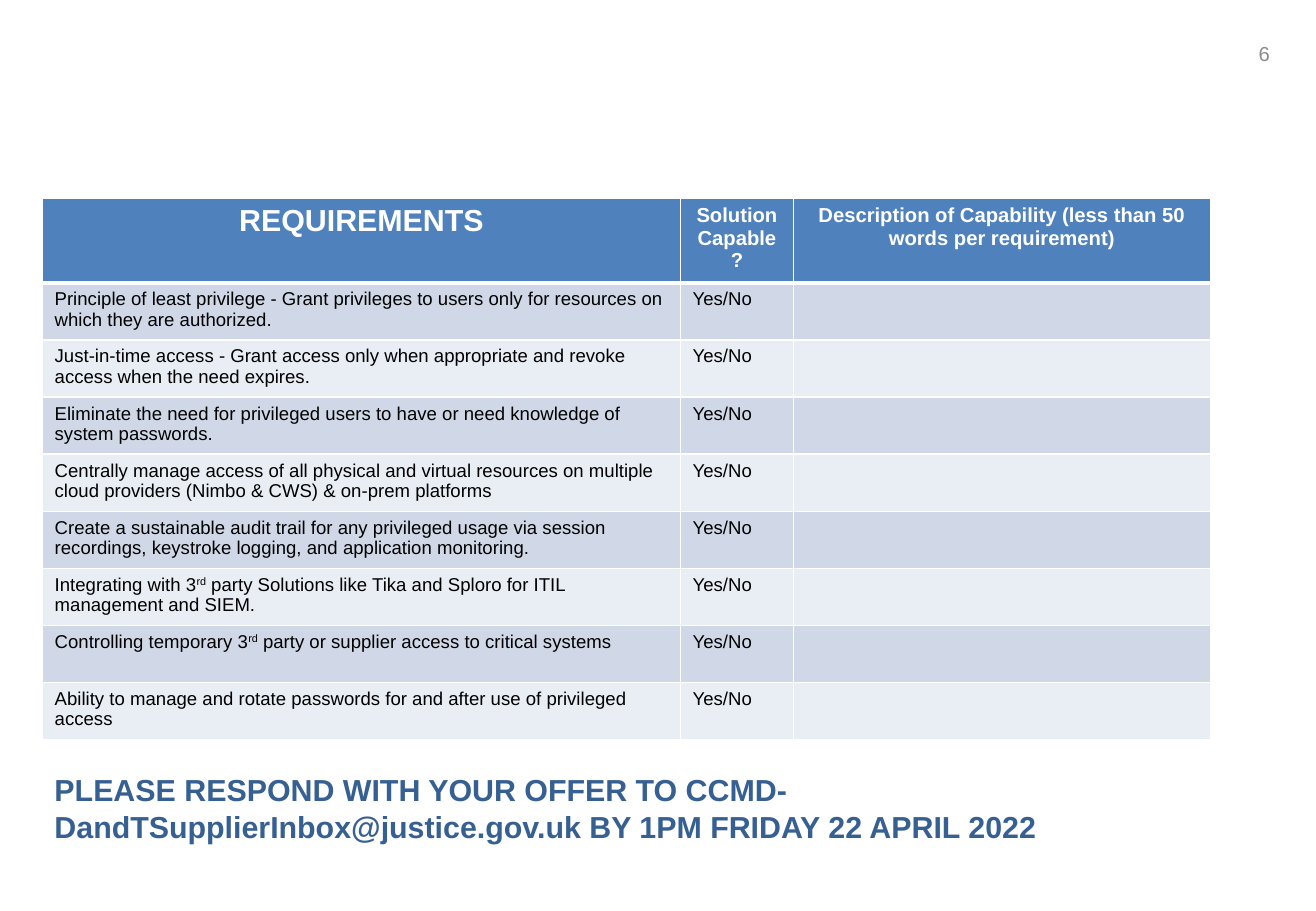
from lxml import etree
from pptx import Presentation
from pptx.dml.color import RGBColor
from pptx.enum.text import MSO_ANCHOR, PP_ALIGN
from pptx.oxml.ns import qn
from pptx.util import Inches, Pt

LEFT, CENTER, RIGHT = PP_ALIGN.LEFT, PP_ALIGN.CENTER, PP_ALIGN.RIGHT
MIDDLE, TOP = MSO_ANCHOR.MIDDLE, MSO_ANCHOR.TOP
BLANK_LAYOUT = 6
FONT = "Arial"
COLORS = {
    "header": "4F81BD",
    "odd_row": "D0D8E8",
    "even_row": "E9EDF4",
    "white": "FFFFFF",
    "text": "000000",
    "notice": "376092",
    "page_number": "8C8C8C",
}

COLUMN_WIDTHS = [5.25, 0.93, 3.43]
HEADER_HEIGHT, ROW_HEIGHT = 0.69, 0.47
HEADERS = [
    ("REQUIREMENTS", 18),
    ("Solution Capable?", 12),
    ("Description of Capability (less than 50 words per requirement)", 12),
]
ANSWER = "Yes/No"
# A requirement is a list of spans; every second span is superscript.
REQUIREMENTS = [
    ["Principle of least privilege - Grant privileges to users only for "
     "resources on which they are authorized."],
    ["Just-in-time access - Grant access only when appropriate and revoke "
     "access when the need expires."],
    ["Eliminate the need for privileged users to have or need knowledge of "
     "system passwords."],
    ["Centrally manage access of all physical and virtual resources on "
     "multiple cloud providers (Nimbo & CWS) & on-prem platforms"],
    ["Create a sustainable audit trail for any privileged usage via session "
     "recordings, keystroke logging, and application monitoring."],
    ["Integrating with 3", "rd", " party Solutions like Tika and Sploro for "
     "ITIL management and SIEM."],
    ["Controlling temporary 3", "rd",
     " party or supplier access to critical systems"],
    ["Ability to manage and rotate passwords for and after use of "
     "privileged access"],
]
NOTICE = ("PLEASE RESPOND WITH YOUR OFFER TO "
          "CCMD-DandTSupplierInbox@justice.gov.uk "
          "BY 1PM FRIDAY 22 APRIL 2022")


def write_text(frame, spans, size=11, color="text", bold=False, align=LEFT):
    """Fill the first paragraph; every second span is superscript."""
    para = frame.paragraphs[0]
    para.alignment = align
    for index, text in enumerate(spans):
        span = para.add_run()
        span.text = text
        span.font.name = FONT
        span.font.size = Pt(size)
        span.font.bold = bold
        span.font.color.rgb = RGBColor.from_string(COLORS[color])
        if index % 2:
            span._r.get_or_add_rPr().set("baseline", "30000")


def add_text_box(slide, box, text, anchor=TOP, right_inset=0.1, **style):
    shape = slide.shapes.add_textbox(*map(Inches, box))
    frame = shape.text_frame
    frame.word_wrap = True
    frame.vertical_anchor = anchor
    frame.margin_right = Inches(right_inset)
    write_text(frame, [text], **style)


def style_cell(cell, fill, top=1, bottom=1):
    """Set white borders (widths in points), then the fill."""
    properties = cell._tc.get_or_add_tcPr()
    for side, width in (("L", 1), ("R", 1), ("T", top), ("B", bottom)):
        line = etree.SubElement(properties, qn(f"a:ln{side}"), w=str(Pt(width)))
        paint = etree.SubElement(line, qn("a:solidFill"))
        etree.SubElement(paint, qn("a:srgbClr"), val=COLORS["white"])
    cell.fill.solid()
    cell.fill.fore_color.rgb = RGBColor.from_string(COLORS[fill])


def add_requirements_table(slide, left, top):
    height = HEADER_HEIGHT + ROW_HEIGHT * len(REQUIREMENTS)
    box = (left, top, sum(COLUMN_WIDTHS), height)
    table = slide.shapes.add_table(
        len(REQUIREMENTS) + 1, len(COLUMN_WIDTHS), *map(Inches, box)).table
    for column, width in zip(table.columns, COLUMN_WIDTHS):
        column.width = Inches(width)
    for index, row in enumerate(table.rows):
        row.height = Inches(ROW_HEIGHT if index else HEADER_HEIGHT)

    for cell, (text, size) in zip(table.rows[0].cells, HEADERS):
        style_cell(cell, "header", bottom=3)
        write_text(cell.text_frame, [text], size=size, color="white",
                   bold=True, align=CENTER)

    for index, requirement in enumerate(REQUIREMENTS, start=1):
        cells = table.rows[index].cells
        for cell in cells:
            style_cell(cell, "odd_row" if index % 2 else "even_row",
                       top=3 if index == 1 else 1)
        write_text(cells[0].text_frame, requirement)
        write_text(cells[1].text_frame, [ANSWER])


def build_requirements_slide(deck):
    slide = deck.slides.add_slide(deck.slide_layouts[BLANK_LAYOUT])
    add_text_box(slide, (10.17, 0.29, 0.42, 0.3), "6", anchor=MIDDLE,
                 right_inset=0.14, size=12, color="page_number", align=RIGHT)
    add_requirements_table(slide, 0.35, 1.63)
    add_text_box(slide, (0.35, 6.3, 10.19, 1.01), NOTICE,
                 size=18, color="notice", bold=True)


def main():
    deck = Presentation()
    deck.slide_width, deck.slide_height = Inches(10.83), Inches(7.5)
    build_requirements_slide(deck)
    deck.save("out.pptx")


if __name__ == "__main__":
    main()
